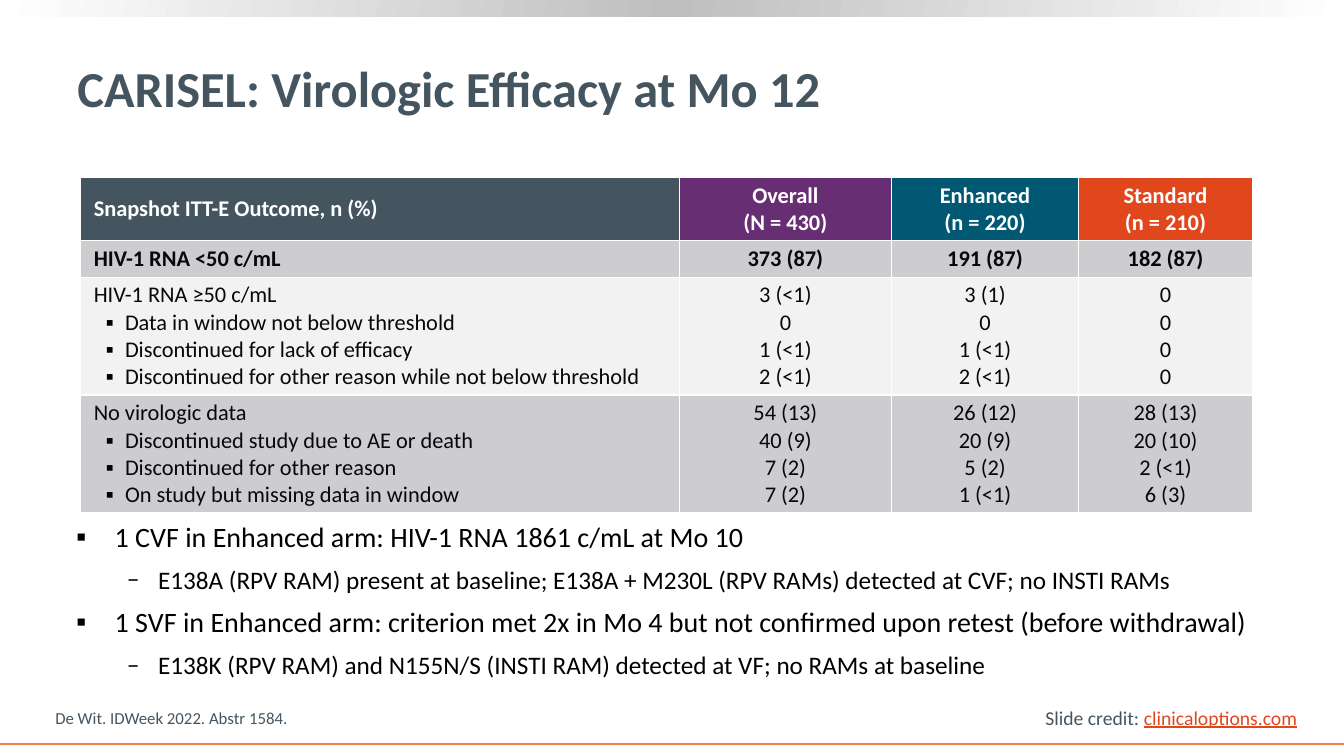
from copy import deepcopy
from dataclasses import dataclass
from lxml.etree import SubElement
from pptx import Presentation
from pptx.dml.color import RGBColor
from pptx.enum.shapes import MSO_CONNECTOR, MSO_SHAPE
from pptx.enum.text import MSO_ANCHOR, PP_ALIGN
from pptx.oxml.ns import qn
from pptx.util import Inches, Pt

TITLE = "CARISEL: Virologic Efficacy at Mo 12"
SOURCE = "De Wit. IDWeek 2022. Abstr 1584."
CREDIT = ("Slide credit: ", "clinicaloptions.com")
HEAD = [
    ["Snapshot ITT-E Outcome, n (%)"],
    ["Overall", "(N = 430)"],
    ["Enhanced", "(n = 220)"],
    ["Standard", "(n = 210)"],
]
ROWS = [
    HEAD,
    [["HIV-1 RNA <50 c/mL"], ["373 (87)"], ["191 (87)"], ["182 (87)"]],
    [
        ["HIV-1 RNA ≥50 c/mL", "Data in window not below threshold",
         "Discontinued for lack of efficacy",
         "Discontinued for other reason while not below threshold"],
        ["3 (<1)", "0", "1 (<1)", "2 (<1)"],
        ["3 (1)", "0", "1 (<1)", "2 (<1)"],
        ["0", "0", "0", "0"],
    ],
    [
        ["No virologic data", "Discontinued study due to AE or death",
         "Discontinued for other reason", "On study but missing data in window"],
        ["54 (13)", "40 (9)", "7 (2)", "7 (2)"],
        ["26 (12)", "20 (9)", "5 (2)", "1 (<1)"],
        ["28 (13)", "20 (10)", "2 (<1)", "6 (3)"],
    ],
]
COLS = [5.94, 2.1, 1.86, 1.72]
NOTES = [
    (0, "1 CVF in Enhanced arm: HIV-1 RNA 1861 c/mL at Mo 10"),
    (1, "E138A (RPV RAM) present at baseline; E138A + M230L (RPV RAMs) detected at CVF; no INSTI RAMs"),
    (0, "1 SVF in Enhanced arm: criterion met 2x in Mo 4 but not confirmed upon retest (before withdrawal)"),
    (1, "E138K (RPV RAM) and N155N/S (INSTI RAM) detected at VF; no RAMs at baseline"),
]
LEVELS = [("▪", 0.38, 0.38, 20), ("‒", 0.81, 0.31, 18)]


@dataclass
class Theme:
    font: str = "Calibri"
    slate: str = "455560"
    orange: str = "E1471D"
    rule: str = "F47D55"
    black: str = "000000"
    ink: str = "07080A"
    white: str = "FFFFFF"
    heads: tuple = ("455560", "682E74", "015873", "E1471D")
    bands: tuple = ("CDCDCF", "F2F2F2")
    bar: tuple = ("FFFFFF", "BFBFBF", "FFFFFF")
    title: int = 36
    cell: int = 16
    credit: int = 14
    source: int = 12


T = Theme()


def color(value):
    return RGBColor.from_string(value)


def write(para, text, size, tint, bold=False, under=False):
    run = para.add_run()
    run.text = text
    font = run.font
    font.name, font.size, font.bold = T.font, Pt(size), bold
    font.color.rgb = color(tint)
    if under:
        font.underline = True


def bullet(para, mark, left, hang):
    props = para._p.get_or_add_pPr()
    props.set("marL", str(Inches(left)))
    props.set("indent", str(-Inches(hang)))
    tint = SubElement(props, qn("a:buClr"))
    SubElement(tint, qn("a:srgbClr")).set("val", T.black)
    SubElement(props, qn("a:buFont")).set("typeface", T.font)
    SubElement(props, qn("a:buChar")).set("char", mark)


def textbox(slide, left, top, width, height, anchor=MSO_ANCHOR.TOP):
    box = slide.shapes.add_textbox(*map(Inches, (left, top, width, height)))
    frame = box.text_frame
    frame.word_wrap = True
    frame.vertical_anchor = anchor
    return frame


def add_para(frame, index):
    return frame.add_paragraph() if index else frame.paragraphs[0]


def draw_frame(slide):
    bar = slide.shapes.add_shape(MSO_SHAPE.RECTANGLE, 0, 0, Inches(13.33), Inches(0.16))
    bar.shadow.inherit = False
    bar.line.fill.background()
    bar.fill.gradient()
    bar.fill.gradient_angle = 170
    stops = bar.element.spPr.find(".//" + qn("a:gsLst"))
    stops.insert(1, deepcopy(stops[0]))
    for place, (stop, tint) in enumerate(zip(bar.fill.gradient_stops, T.bar)):
        stop.position = place / 2
        stop.color.rgb = color(tint)
    rule = slide.shapes.add_connector(
        MSO_CONNECTOR.STRAIGHT, 0, Inches(7.38), Inches(13.33), Inches(7.38))
    rule.line.color.rgb = color(T.rule)
    rule.line.width = Pt(1.5)
    SubElement(rule._element.spPr, qn("a:effectLst"))


def draw_table(slide):
    heights = [0.27 * max(map(len, row)) + 0.09 for row in ROWS]
    table = slide.shapes.add_table(
        len(ROWS), len(COLS), Inches(0.8), Inches(1.76),
        Inches(sum(COLS)), Inches(sum(heights))).table
    for col, width in zip(table.columns, COLS):
        col.width = Inches(width)
    for r, row in enumerate(ROWS):
        table.rows[r].height = Inches(heights[r])
        for c, lines in enumerate(row):
            cell = table.cell(r, c)
            cell.fill.solid()
            cell.fill.fore_color.rgb = color(T.bands[(r - 1) % 2] if r else T.heads[c])
            cell.vertical_anchor = MSO_ANCHOR.MIDDLE
            cell.margin_left = cell.margin_right = Inches(0.13)
            cell.margin_top = cell.margin_bottom = Inches(0.04)
            for i, line in enumerate(lines):
                para = add_para(cell.text_frame, i)
                if c:
                    para.alignment = PP_ALIGN.CENTER
                elif i:
                    bullet(para, "▪", 0.31, 0.19)
                write(para, line, T.cell, T.ink if r else T.white, bold=r < 2)


def draw_notes(slide):
    frame = textbox(slide, 0.66, 5.14, 11.9, 1.7)
    for i, (level, text) in enumerate(NOTES):
        mark, left, hang, size = LEVELS[level]
        para = add_para(frame, i)
        para.level = level
        bullet(para, mark, left, hang)
        para.line_spacing = 0.9
        if i:
            para.space_before = Pt(10)
        write(para, text, size, T.black)


def main():
    deck = Presentation()
    deck.slide_width, deck.slide_height = Inches(13.33), Inches(7.5)
    slide = deck.slides.add_slide(deck.slide_layouts[6])
    draw_frame(slide)
    title = textbox(slide, 0.67, 0.26, 11.89, 1.21, MSO_ANCHOR.MIDDLE)
    write(title.paragraphs[0], TITLE, T.title, T.slate, bold=True)
    draw_table(slide)
    draw_notes(slide)
    source = textbox(slide, 0.45, 6.97, 8.59, 0.3, MSO_ANCHOR.BOTTOM)
    write(source.paragraphs[0], SOURCE, T.source, T.slate)
    credit = textbox(slide, 10.27, 6.95, 2.72, 0.34)
    credit.word_wrap = False
    label, site = CREDIT
    write(credit.paragraphs[0], label, T.credit, T.slate)
    write(credit.paragraphs[0], site, T.credit, T.orange, under=True)
    deck.save("out.pptx")


if __name__ == "__main__":
    main()
